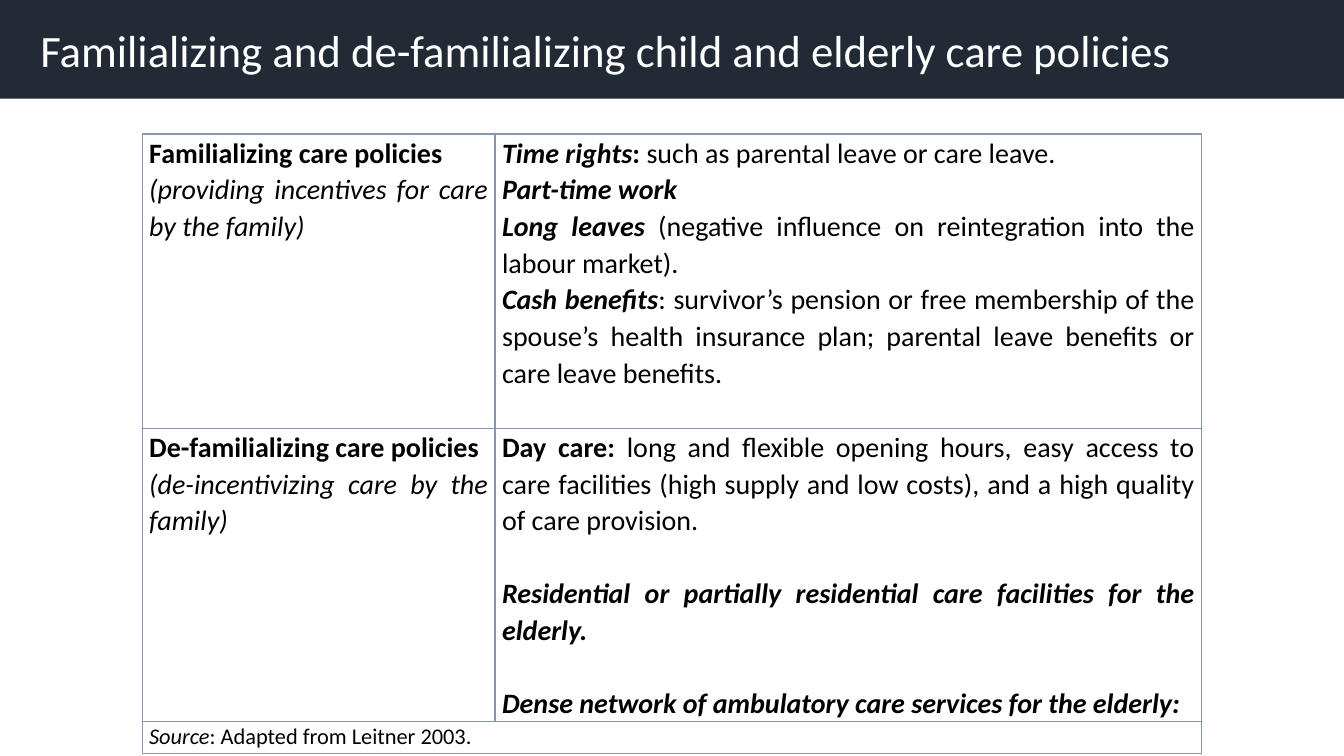
"""Build the slide on familializing and de-familializing care policies."""
from lxml import etree
from pptx import Presentation
from pptx.dml.color import RGBColor
from pptx.enum.text import MSO_ANCHOR, MSO_AUTO_SIZE, PP_ALIGN
from pptx.oxml.ns import qn
from pptx.util import Inches, Pt

LEFT, JUSTIFY = PP_ALIGN.LEFT, PP_ALIGN.JUSTIFY
TOP, MIDDLE = MSO_ANCHOR.TOP, MSO_ANCHOR.MIDDLE
NO_FIT = MSO_AUTO_SIZE.NONE
FONT = "Calibri"
NAVY, WHITE, BLACK, BORDER = "222A35", "FFFFFF", "000000", "8496B0"
BODY_SIZE, SOURCE_SIZE, LINE_GAP = 20, 16, 26

TITLE = "Familializing and de-familializing child and elderly care policies"
FAMILIALIZING = [
    (0, [("Familializing care policies", "b")]),
    (0, [("(providing incentives for care by the family)", "i")]),
]
FAMILIALIZING_POLICIES = [
    (0, [("Time rights", "bi"), (":", "b"), (" such as parental leave or care leave.", "")]),
    (0, [("Part-time work", "bi")]),
    (0, [("Long leaves", "bi"),
         (" (negative influence on reintegration into the labour market).", "")]),
    (0, [("Cash benefits", "bi"),
         (": survivor’s pension or free membership of the spouse’s health insurance plan; "
          "parental leave benefits or care leave benefits.", "")]),
]
DE_FAMILIALIZING = [
    (0, [("De-familializing care policies", "b")]),
    (0, [("(de-incentivizing care by the family)", "i")]),
]
DE_FAMILIALIZING_POLICIES = [
    (0, [("Day care:", "b"),
         (" long and flexible opening hours, easy access to care facilities "
          "(high supply and low costs), and a high quality of care provision.", "")]),
    (LINE_GAP, [("Residential or partially residential care facilities for the elderly.", "bi")]),
    (LINE_GAP, [("Dense network of ambulatory care services for the elderly:", "bi")]),
]
SOURCE = [(0, [("Source", "i"), (": Adapted from Leitner 2003.", "")])]
ROWS = [
    (2.92, BODY_SIZE, [FAMILIALIZING, FAMILIALIZING_POLICIES]),
    (2.91, BODY_SIZE, [DE_FAMILIALIZING, DE_FAMILIALIZING_POLICIES]),
    (0.32, SOURCE_SIZE, [SOURCE]),
]
COLUMNS = [3.5, 7.01]
TABLE_LEFT, TABLE_TOP = 1.41, 1.33
CELL_FORMAT = {"margin_left": Inches(0.07), "margin_right": Inches(0.07),
               "margin_top": 0, "margin_bottom": 0, "vertical_anchor": TOP}


def color(value):
    return RGBColor.from_string(value)


def apply(target, values):
    for name, value in values.items():
        setattr(target, name, value)


def add_span(para, text, size, ink, style=""):
    span = para.add_run()
    span.text = text
    apply(span.font, {"name": FONT, "size": Pt(size),
                      "bold": "b" in style, "italic": "i" in style})
    span.font.color.rgb = color(ink)


def add_borders(cell):
    properties = cell._tc.get_or_add_tcPr()
    for position, side in enumerate(("a:lnL", "a:lnR", "a:lnT", "a:lnB")):
        line = etree.Element(qn(side), w=str(Pt(1)))
        fill = etree.SubElement(line, qn("a:solidFill"))
        etree.SubElement(fill, qn("a:srgbClr"), val=BORDER)
        properties.insert(position, line)


def fill_cell(cell, paragraphs, size):
    apply(cell, CELL_FORMAT)
    frame = cell.text_frame
    for number, (gap, spans) in enumerate(paragraphs):
        para = frame.add_paragraph() if number else frame.paragraphs[0]
        apply(para, {"alignment": JUSTIFY, "line_spacing": 1.07, "space_before": Pt(gap)})
        for text, style in spans:
            add_span(para, text, size, BLACK, style)


def add_title(page, width):
    box = page.shapes.title
    apply(box, {"left": 0, "top": 0, "width": width, "height": Inches(0.98)})
    box.fill.solid()
    box.fill.fore_color.rgb = color(NAVY)
    apply(box.text_frame, {"margin_left": Inches(0.4), "vertical_anchor": MIDDLE,
                           "auto_size": NO_FIT, "word_wrap": True})
    para = box.text_frame.paragraphs[0]
    para.alignment = LEFT
    add_span(para, TITLE, 32, WHITE)


def add_policy_table(page):
    height = sum(row[0] for row in ROWS)
    table = page.shapes.add_table(
        len(ROWS), len(COLUMNS), Inches(TABLE_LEFT), Inches(TABLE_TOP),
        Inches(sum(COLUMNS)), Inches(height)).table
    apply(table, {"first_row": False, "horz_banding": False})
    for column, width in zip(table.columns, COLUMNS):
        column.width = Inches(width)
    for row, (row_height, size, contents) in zip(table.rows, ROWS):
        row.height = Inches(row_height)
        for cell in row.cells:
            cell.fill.background()
            add_borders(cell)
        if len(contents) == 1:
            row.cells[0].merge(row.cells[len(COLUMNS) - 1])
        for cell, paragraphs in zip(row.cells, contents):
            fill_cell(cell, paragraphs, size)


def main():
    deck = Presentation()
    apply(deck, {"slide_width": Inches(13.33), "slide_height": Inches(7.5)})
    page = deck.slides.add_slide(deck.slide_layouts.get_by_name("Title Only"))
    add_title(page, deck.slide_width)
    add_policy_table(page)
    deck.save("out.pptx")


if __name__ == "__main__":
    main()
